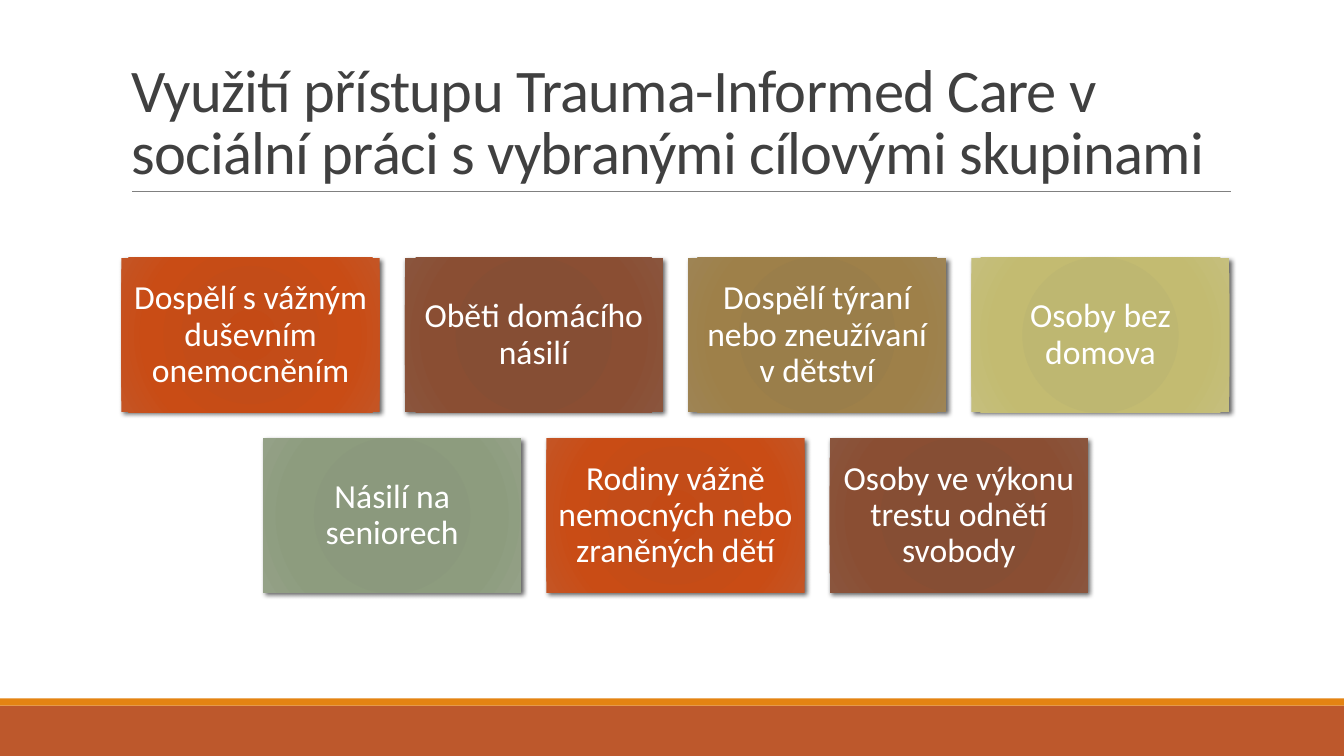
from pptx import Presentation
from pptx.dml.color import RGBColor
from pptx.enum.shapes import MSO_CONNECTOR, MSO_SHAPE
from pptx.enum.text import MSO_ANCHOR, MSO_AUTO_SIZE, PP_ALIGN
from pptx.oxml import parse_xml
from pptx.oxml.ns import nsdecls, qn
from pptx.util import Inches, Pt

RECT = MSO_SHAPE.RECTANGLE
STRAIGHT = MSO_CONNECTOR.STRAIGHT
LEFT, CENTER = PP_ALIGN.LEFT, PP_ALIGN.CENTER
MIDDLE, BOTTOM = MSO_ANCHOR.MIDDLE, MSO_ANCHOR.BOTTOM
NO_AUTOFIT = MSO_AUTO_SIZE.NONE

FONT = "Calibri"
COLORS = {
    "title": "404040",
    "card_text": "FFFFFF",
    "rule": "808080",
    "footer": "BD582C",
    "footer_edge": "E48312",
}
GRADIENTS = {
    "orange": ["C44A15", "C34C18", "C94C15", "C45525"],
    "brown": ["874C32", "864E34", "8A4E33", "8A553D"],
    "ochre": ["9A7D48", "9A7E4A", "9E8049", "9E8454"],
    "lime": ["BEB76E", "BEB771", "C3BB71", "C5BF7D"],
    "sage": ["8A987B", "8B997D", "8D9C7E", "94A187"],
}
STOPS = [0, 34, 70, 100]

TITLE = "Využití přístupu Trauma-Informed Care v sociální práci s vybranými cílovými skupinami"
GROUP_ROWS = [
    [
        ("Dospělí s vážným duševním onemocněním", "orange"),
        ("Oběti domácího násilí", "brown"),
        ("Dospělí týraní nebo zneužívaní v dětství", "ochre"),
        ("Osoby bez domova", "lime"),
    ],
    [
        ("Násilí na seniorech", "sage"),
        ("Rodiny vážně nemocných nebo zraněných dětí", "orange"),
        ("Osoby ve výkonu trestu odnětí svobody", "brown"),
    ],
]
CARD_W, CARD_H = 2.56, 1.53
PITCH_X, PITCH_Y = 2.81, 1.79
CARDS_CENTER, CARDS_TOP = 6.7, 2.56


def rgb(name):
    return RGBColor.from_string(COLORS[name])


def write_text(sp, text, *, size, color, align, anchor, line_spacing, spacing=None):
    """Fill a shape with one formatted paragraph; spacing is in points."""
    tf = sp.text_frame
    tf.word_wrap = True
    tf.auto_size = NO_AUTOFIT
    tf.vertical_anchor = anchor
    p = tf.paragraphs[0]
    p.alignment = align
    p.line_spacing = line_spacing
    r = p.add_run()
    r.text = text
    r.font.name = FONT
    r.font.size = Pt(size)
    r.font.color.rgb = rgb(color)
    if spacing is not None:
        r.font._element.set("spc", str(round(spacing * 100)))


def add_rect(slide, left, top, width, height):
    sp = slide.shapes.add_shape(
        RECT, Inches(left), Inches(top), Inches(width), Inches(height))
    sp.line.fill.background()
    sp.shadow.inherit = False
    return sp


def add_band(slide, top, height, color):
    sp = add_rect(slide, 0, top, 13.33, height)
    sp.fill.solid()
    sp.fill.fore_color.rgb = rgb(color)


def add_rule(slide, left, right, y):
    line = slide.shapes.add_connector(
        STRAIGHT, Inches(left), Inches(y), Inches(right), Inches(y))
    line.line.color.rgb = rgb("rule")
    line.line.width = Pt(0.5)
    line._element.spPr.append(parse_xml(f"<a:effectLst {nsdecls('a')}/>"))


def set_radial_gradient(sp, colors):
    sp.fill.gradient()
    stops = "".join(
        f'<a:gs pos="{pos * 1000}"><a:srgbClr val="{color}"/></a:gs>'
        for pos, color in zip(STOPS, colors))
    spPr = sp._element.spPr
    spPr.replace(spPr.find(qn("a:gradFill")), parse_xml(
        f'<a:gradFill {nsdecls("a")} rotWithShape="1"><a:gsLst>{stops}</a:gsLst>'
        '<a:path path="circle"><a:fillToRect l="100000" t="100000" r="100000" b="100000"/>'
        '</a:path></a:gradFill>'))


def add_drop_shadow(sp):
    sp._element.spPr.find(qn("a:effectLst")).append(parse_xml(
        f'<a:outerShdw {nsdecls("a")} blurRad="{Pt(3.5)}" dist="{Pt(2)}" '
        'dir="2700000" algn="br" rotWithShape="0">'
        '<a:srgbClr val="000000"><a:alpha val="60000"/></a:srgbClr></a:outerShdw>'))


def add_card(slide, left, top, text, gradient):
    sp = add_rect(slide, left, top, CARD_W, CARD_H)
    set_radial_gradient(sp, GRADIENTS[gradient])
    add_drop_shadow(sp)
    tf = sp.text_frame
    tf.margin_left = tf.margin_right = tf.margin_top = tf.margin_bottom = Inches(0.1)
    write_text(sp, text, size=24, color="card_text", align=CENTER,
               anchor=MIDDLE, line_spacing=0.9)


def add_card_rows(slide):
    """Lay out each row of cards around the same vertical axis."""
    for i, row in enumerate(GROUP_ROWS):
        row_width = (len(row) - 1) * PITCH_X + CARD_W
        left = CARDS_CENTER - row_width / 2
        for j, (text, gradient) in enumerate(row):
            add_card(slide, left + j * PITCH_X, CARDS_TOP + i * PITCH_Y, text, gradient)


def add_title(slide):
    title = slide.shapes.title
    title.left, title.top = Inches(1.2), Inches(0.31)
    title.width, title.height = Inches(11), Inches(1.59)
    write_text(title, TITLE, size=43.2, color="title", align=LEFT,
               anchor=BOTTOM, line_spacing=0.85, spacing=-0.5)


def main():
    prs = Presentation()
    prs.slide_width, prs.slide_height = Inches(13.33), Inches(7.5)
    slide = prs.slides.add_slide(prs.slide_layouts[5])
    add_band(slide, 7, 0.5, "footer")
    add_band(slide, 6.93, 0.07, "footer_edge")
    add_rule(slide, 1.31, 12.21, 1.9)
    add_title(slide)
    add_card_rows(slide)
    prs.save("out.pptx")


if __name__ == "__main__":
    main()
